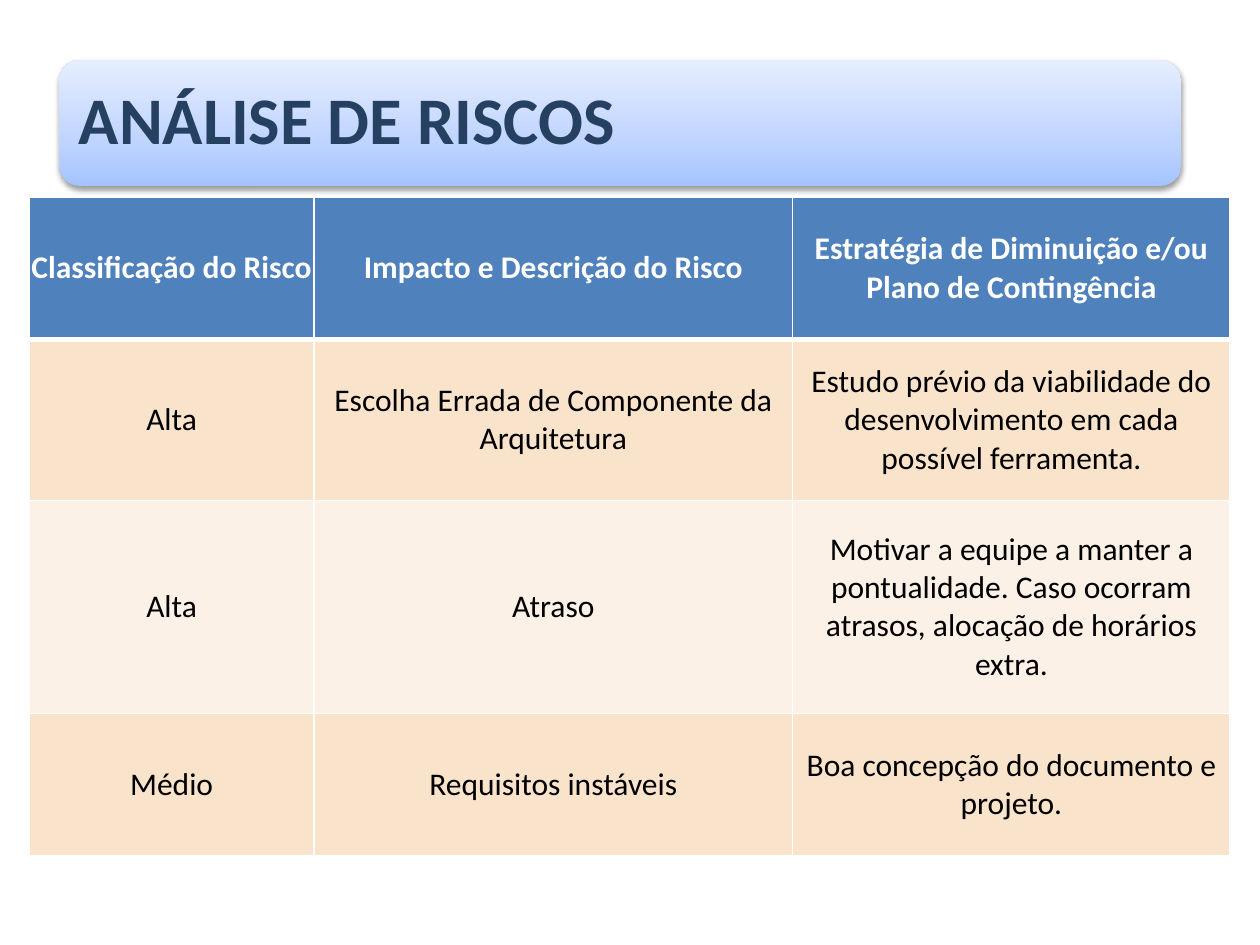
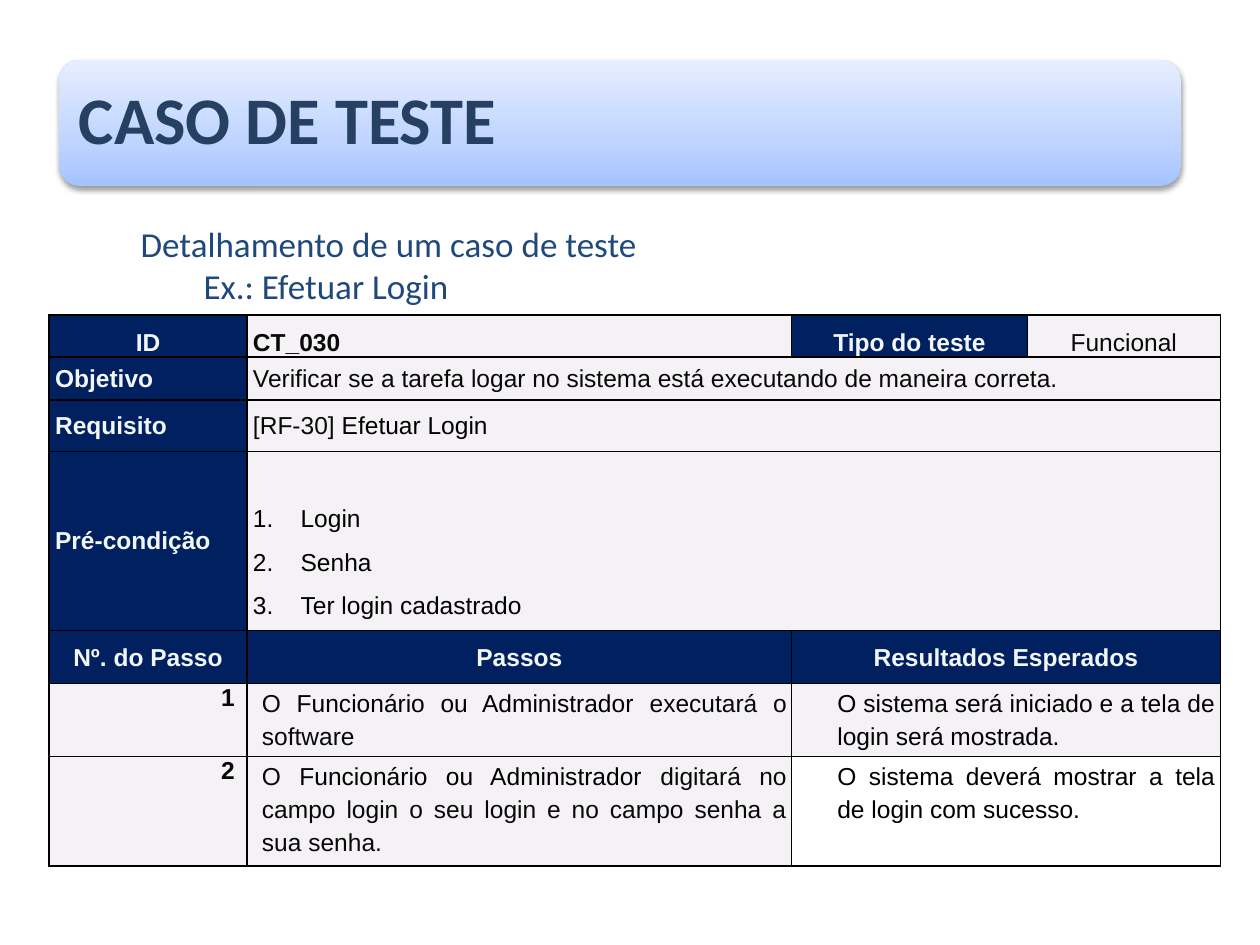
from dataclasses import dataclass

from lxml import etree
from pptx import Presentation
from pptx.dml.color import RGBColor
from pptx.enum import shapes, text
from pptx.oxml import parse_xml
from pptx.oxml.ns import nsdecls, qn
from pptx.util import Cm, Pt


@dataclass(frozen=True)
class Theme:
    # Colours
    title: str = "254061"
    body: str = "1F497D"
    band: tuple = ((0, "A4C4FF"), (35, "BFD4FF"), (100, "E6EEFF"))
    risk_header: str = "4F81BD"
    risk_rows: tuple = ("F9E3CB", "FCF1E7")
    white: str = "FFFFFF"
    black: str = "000000"
    ink: str = "080808"
    label_fill: str = "002060"
    label_text: str = "F2F6F6"
    value_fill: str = "F4F2F5"
    # Fonts and sizes
    main_font: str = "Calibri"
    test_font: str = "Arial"
    title_size: int = 38
    body_size: int = 20
    risk_size: int = 18
    test_size: int = 14


theme = Theme()
LEFT, CENTER, RIGHT, JUSTIFY = (
    text.PP_ALIGN.LEFT, text.PP_ALIGN.CENTER, text.PP_ALIGN.RIGHT, text.PP_ALIGN.JUSTIFY)
TOP, MIDDLE, BOTTOM = (
    text.MSO_ANCHOR.TOP, text.MSO_ANCHOR.MIDDLE, text.MSO_ANCHOR.BOTTOM)


def write(frame, content, *, size, color, font=theme.main_font, bold=False, align=LEFT,
          line=1.0, before=0, after=0, indent=0, hanging=0, numbered=False):
    """Add a paragraph; content is a string or a list of (string, colour) runs."""
    paragraph = frame.add_paragraph() if frame.text else frame.paragraphs[0]
    properties = paragraph._p.get_or_add_pPr()
    properties.set("marL", str(Cm(indent)))
    properties.set("indent", str(-Cm(hanging)))
    if numbered:
        etree.SubElement(properties, qn("a:buAutoNum")).set("type", "arabicPeriod")
    else:
        etree.SubElement(properties, qn("a:buNone"))
    paragraph.alignment = align
    paragraph.line_spacing = line
    paragraph.space_before, paragraph.space_after = Pt(before), Pt(after)
    for words, run_color in [(content, color)] if isinstance(content, str) else content:
        run = paragraph.add_run()
        run.text = words
        run.font.name, run.font.size, run.font.bold = font, Pt(size), bold
        run.font.color.rgb = RGBColor.from_string(run_color)


def format_cell(cell, fill, border, *, anchor=MIDDLE, side=0.12, right=None, top=0.02,
                bottom=0, widths=(1, 1, 1, 1)):
    """Set margins, borders (left, right, top, bottom, in points) and fill."""
    cell.margin_left, cell.margin_right = Cm(side), Cm(side if right is None else right)
    cell.margin_top, cell.margin_bottom = Cm(top), Cm(bottom)
    cell.vertical_anchor = anchor
    properties = cell._tc.get_or_add_tcPr()
    for edge, width in zip("LRTB", widths):
        properties.append(parse_xml(
            f'<a:ln{edge} {nsdecls("a")} w="{Pt(width)}"><a:solidFill>'
            f'<a:srgbClr val="{border}"/></a:solidFill></a:ln{edge}>'))
    cell.fill.solid()
    cell.fill.fore_color.rgb = RGBColor.from_string(fill)


presentation = Presentation()
presentation.slide_width, presentation.slide_height = Cm(25.4), Cm(19.05)
title_and_body, title_only = presentation.slide_layouts[1], presentation.slide_layouts[5]

# Shared title band
slides = []
for layout, heading in [(title_only, "ANÁLISE DE RISCOS"), (title_and_body, "CASO DE TESTE")]:
    slide = presentation.slides.add_slide(layout)
    slides.append(slide)
    band_box = Cm(1.19), Cm(1.21), Cm(22.62), Cm(2.54)

    band = slide.shapes.add_shape(shapes.MSO_SHAPE.ROUNDED_RECTANGLE, *band_box)
    band.line.fill.background()
    stops = "".join(f'<a:gs pos="{place * 1000}"><a:srgbClr val="{color}"/></a:gs>'
                    for place, color in theme.band)
    outline = band.element.spPr.find(qn("a:ln"))
    outline.addprevious(parse_xml(
        f'<a:gradFill {nsdecls("a")} rotWithShape="1"><a:gsLst>{stops}</a:gsLst>'
        '<a:lin ang="16200000" scaled="0"/></a:gradFill>'))
    outline.addnext(parse_xml(
        f'<a:effectLst {nsdecls("a")}><a:outerShdw blurRad="{Pt(3.1)}" dist="{Pt(1.6)}" '
        f'dir="5400000" rotWithShape="0"><a:srgbClr val="{theme.black}">'
        '<a:alpha val="38000"/></a:srgbClr></a:outerShdw></a:effectLst>'))
    slide.shapes.element.insert(2, band.element)  # behind the title

    title = slide.shapes.title
    title.left, title.top, title.width, title.height = band_box
    frame = title.text_frame
    frame.auto_size = text.MSO_AUTO_SIZE.NONE
    frame.vertical_anchor = MIDDLE
    frame.margin_left = frame.margin_right = frame.margin_top = frame.margin_bottom = Cm(0.4)
    write(frame, heading, size=theme.title_size, color=theme.title, bold=True, line=0.9)

risk_slide, test_slide = slides

# Risk table
risks = [
    ("Classificação do Risco", "Impacto e Descrição do Risco",
     "Estratégia de Diminuição e/ou Plano de Contingência"),
    ("Alta", "Escolha Errada de Componente da Arquitetura",
     "Estudo prévio da viabilidade do desenvolvimento em cada possível ferramenta."),
    ("Alta", "Atraso",
     "Motivar a equipe a manter a pontualidade. Caso ocorram atrasos, "
     "alocação de horários extra."),
    ("Médio", "Requisitos instáveis", "Boa concepção do documento e projeto."),
]
risk_columns, risk_heights = (5.74, 9.65, 8.82), (2.87, 3.25, 4.29, 2.87)
risk_table = risk_slide.shapes.add_table(
    len(risks), 3, Cm(0.59), Cm(3.97), Cm(sum(risk_columns)), Cm(sum(risk_heights))).table
for column, width in zip(risk_table.columns, risk_columns):
    column.width = Cm(width)
for index, (row, height) in enumerate(zip(risk_table.rows, risk_heights)):
    row.height = Cm(height)
    header = index == 0
    fill = theme.risk_header if header else theme.risk_rows[(index - 1) % 2]
    for cell, words in zip(row.cells, risks[index]):
        format_cell(cell, fill, theme.white, side=0.03, top=0,
                    widths=(1, 1, 3 if index == 1 else 1, 3 if header else 1))
        write(cell.text_frame, words, size=theme.risk_size, bold=header, align=CENTER,
              color=theme.white if header else theme.black)

# Test case introduction
intro = test_slide.placeholders[1]
intro.left, intro.top, intro.width, intro.height = Cm(2.58), Cm(4.36), Cm(18.85), Cm(1.96)
intro.text_frame.auto_size = text.MSO_AUTO_SIZE.NONE
for words, indent in [("Detalhamento de um caso de teste", 0), ("Ex.: Efetuar Login", 1.27)]:
    write(intro.text_frame, words, size=theme.body_size, color=theme.body, indent=indent)

# Test case table: grid and merged cells
test_columns = (3.99, 10.98, 4.75, 3.89)
test_heights = (0.85, 0.86, 1.04, 3.61, 1.07, 1.47, 2.21)
test_table = test_slide.shapes.add_table(
    len(test_heights), len(test_columns), Cm(0.99), Cm(6.35),
    Cm(sum(test_columns)), Cm(sum(test_heights))).table
for column, width in zip(test_table.columns, test_columns):
    column.width = Cm(width)
for row, height in zip(test_table.rows, test_heights):
    row.height = Cm(height)
for row, first_column in [(1, 1), (2, 1), (3, 1), (4, 2), (5, 2), (6, 2)]:
    test_table.cell(row, first_column).merge(test_table.cell(row, 3))

# Test case table: fills, borders and margins
labels = {(0, 0): "ID", (0, 2): "Tipo do teste", (1, 0): "Objetivo", (2, 0): "Requisito",
          (3, 0): "Pré-condição", (4, 0): "Nº. do Passo", (4, 1): "Passos",
          (4, 2): "Resultados Esperados"}
for row in range(len(test_heights)):
    for column in range(len(test_columns)):
        fill = theme.label_fill if (row, column) in labels else theme.value_fill
        layout = {}
        if row == 0:
            layout = dict(anchor=BOTTOM)
        elif (row, column) == (3, 1):
            layout = dict(anchor=BOTTOM, bottom=0.21)
        elif row >= 5:
            layout = dict(anchor=TOP, right=0.25 if column == 0 else 0.1)
        if row == 6 and column >= 2:
            fill = theme.white
        format_cell(test_table.cell(row, column), fill, theme.black, **layout)

# Test case table: labels and values
test_style = dict(size=theme.test_size, font=theme.test_font)
for (row, column), words in labels.items():
    write(test_table.cell(row, column).text_frame, words, **test_style, bold=True,
          color=theme.label_text, align=CENTER if row in (0, 4) else JUSTIFY)

values = [
    (0, 1, "CT_030", True, JUSTIFY),
    (0, 3, "Funcional", False, CENTER),
    (1, 1, "Verificar se a tarefa logar no sistema está executando de maneira correta.",
     False, JUSTIFY),
    (2, 1, [("[RF-30] ", theme.ink), ("Efetuar Login", theme.black)], False, JUSTIFY),
]
for row, column, words, bold, align in values:
    write(test_table.cell(row, column).text_frame, words, **test_style, bold=bold,
          color=theme.ink, align=align)

for position, condition in enumerate(["Login", "Senha", "Ter login cadastrado"]):
    write(test_table.cell(3, 1).text_frame, condition, **test_style, color=theme.black,
          line=1.2, before=3 if position else 0, after=3,
          indent=0.96, hanging=0.96, numbered=True)

# Test case table: steps and expected results
steps = [
    (" executará o software", "O sistema será iniciado e a tela de login será mostrada."),
    (" digitará no campo login o seu login e no campo senha a sua senha.",
     "O sistema deverá mostrar a tela de login com sucesso."),
]
for number, (action, result) in enumerate(steps, start=1):
    number_cell, step_cell, result_cell = (
        test_table.cell(4 + number, column) for column in range(3))
    write(number_cell.text_frame, str(number), **test_style, color=theme.ink, bold=True,
          align=RIGHT)
    step = [("O ", theme.ink), ("Funcionário ou Administrador", theme.black),
            (action, theme.ink)]
    write(step_cell.text_frame, step, **test_style, color=theme.ink, align=JUSTIFY,
          line=1.2, indent=0.18)
    write(result_cell.text_frame, result, **test_style, color=theme.black, align=JUSTIFY,
          line=1.2, indent=0.8)

presentation.save("out.pptx")
